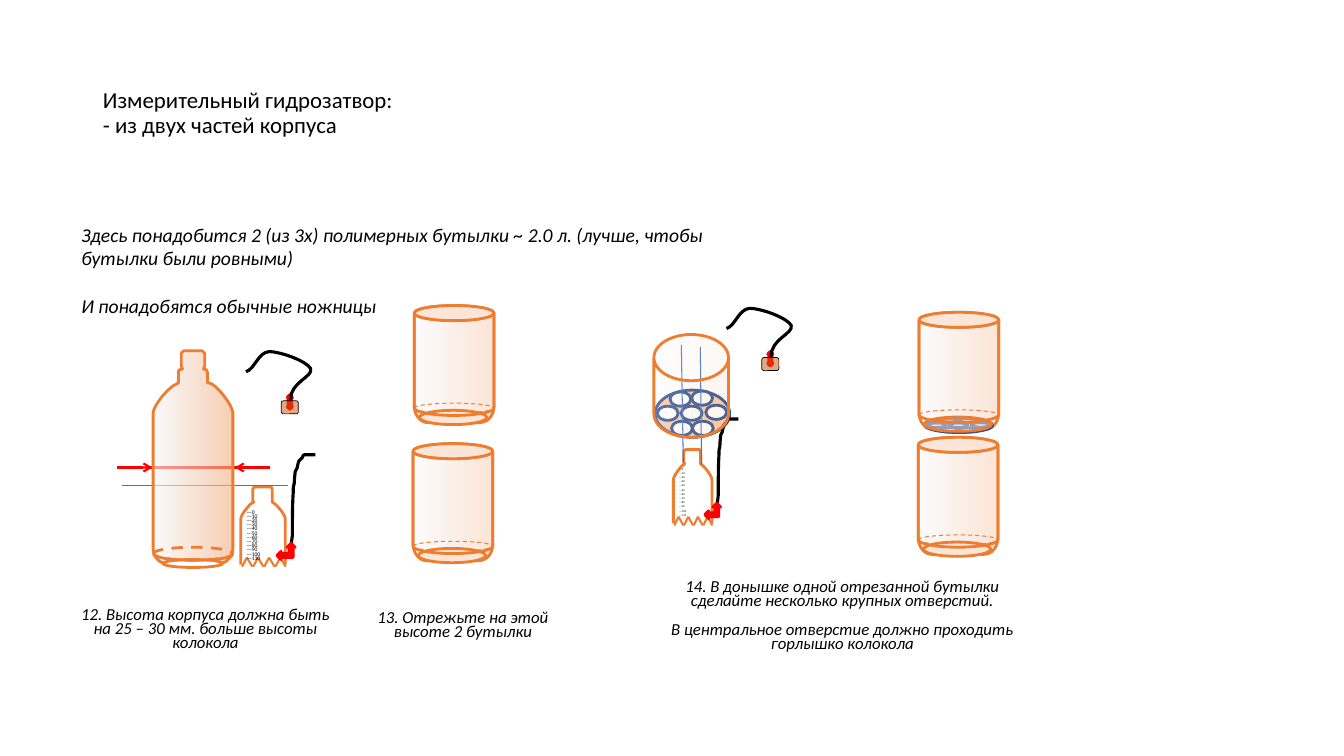
from lxml import etree
from pptx import Presentation
from pptx.dml.color import RGBColor as RGB
from pptx.enum.dml import MSO_LINE
from pptx.enum.shapes import MSO_CONNECTOR, MSO_SHAPE as SHAPE
from pptx.enum.text import MSO_ANCHOR, MSO_AUTO_SIZE, PP_ALIGN
from pptx.oxml.ns import qn
from pptx.util import Cm, Pt

HUE = {"ink": "000000", "rim": "ED7D31", "red": "FF0000", "blue": "4472C4",
       "navy": "325490", "white": "FFFFFF", "pale": "FBE5D6", "peach": "F8CBAD",
       "frost": "F6F8FC", "glow": "F4B183", "rust": "C55A11"}

deck = Presentation()
deck.slide_width, deck.slide_height = Cm(33.87), Cm(19.05)
slide = deck.slides.add_slide(deck.slide_layouts[5])
shapes = slide.shapes


def paint(shape, fill=(), line=None, wide=2, dash=False):
    """Fill is a run of (colour, opacity): none, one, or two for a gradient."""
    props = shape._element.spPr
    if len(fill) == 2:
        shape.fill.gradient()
        shape.fill.gradient_angle = 0
        for stop, (name, _) in zip(shape.fill.gradient_stops, fill):
            stop.color.rgb = RGB.from_string(HUE[name])
    elif fill:
        shape.fill.solid()
        shape.fill.fore_color.rgb = RGB.from_string(HUE[fill[0][0]])
    elif hasattr(shape, "fill"):
        shape.fill.background()
    for node, (_, alpha) in zip(list(props.iter(qn("a:srgbClr"))), fill):
        if alpha < 100:
            etree.SubElement(node, qn("a:alpha"), val=str(alpha * 1000))
    if line:
        shape.line.color.rgb = RGB.from_string(HUE[line])
        shape.line.width = Pt(wide)
        if dash:
            shape.line.dash_style = MSO_LINE.DASH
    else:
        shape.line.fill.background()
    etree.SubElement(props, qn("a:effectLst"))
    return shape


def trace(x, y, steps, close=True, sx=1, sy=1):
    """Outline from points (2 numbers) and cubic curves (6 numbers), in cm."""
    dots = [steps[0]]
    for step in steps[1:]:
        if len(step) == 2:
            dots.append(step)
            continue
        ends = [dots[-1], step[:2], step[2:4], step[4:]]
        for t in (n / 8 for n in range(1, 9)):
            parts = ((1 - t) ** 3, 3 * t * (1 - t) ** 2, 3 * t * t * (1 - t), t ** 3)
            dots.append([sum(p * e[i] for p, e in zip(parts, ends)) for i in (0, 1)])
    dots = [(Cm(x + a * sx), Cm(y + b * sy)) for a, b in dots]
    pen = shapes.build_freeform(*dots[0], scale=1.0)
    pen.add_line_segments(dots[1:], close=close)
    return pen.convert_to_shape()


WHITE, PALE = [("white", 100)], [("pale", 100)]

# Title
title = shapes.title
title.left, title.top, title.width, title.height = map(Cm, (2.34, 1.02, 20.55, 3.68))
frame = title.text_frame
frame.auto_size, frame.vertical_anchor = MSO_AUTO_SIZE.NONE, MSO_ANCHOR.MIDDLE
para = frame.paragraphs[0]
para.alignment, para.line_spacing = PP_ALIGN.LEFT, 0.9
para.add_run().text = "Измерительный гидрозатвор:"
para.add_line_break()
para.add_run().text = "- из двух частей корпуса"
for run in para.runs:
    run.font.name, run.font.size = "Calibri", Pt(16.3)
    run.font.color.rgb = RGB.from_string(HUE["ink"])

# Cut bottles: bodies
CUPS = [(10.44, 7.7), (10.41, 11.18), (23.16, 7.87), (23.14, 11.02)]
HOLED = CUPS[2]
BODY = [(0, .2), (2.01, .2), (2.01, 2.54), (2.01, 2.74, 1.88, 2.95, 1.65, 2.95),
        (.33, 2.95), (.15, 2.95, 0, 2.74, 0, 2.54)]
for x, y in CUPS:
    paint(trace(x, y, BODY), [("frost", 36), ("glow", 33)], "rim")

# Bottoms with holes, places as shares of the disc
HOLES = [(.35, .34), (.2, .04), (.49, .02), (.68, .32), (.03, .34), (.22, .66), (.5, .66)]
for x, y, w, h in [(16.51, 9.83, 1.88, 1.19), (23.32, 10.54, 1.7, .36)]:
    disc = shapes.add_shape(SHAPE.OVAL, *map(Cm, (x, y, w, h)))
    paint(disc, [("peach", 100)], "navy")
    for a, b in HOLES:
        box = x + a * w, y + b * h, .28 * w, .3 * h
        paint(shapes.add_shape(SHAPE.OVAL, *map(Cm, box)), WHITE, "navy")

# Cut bottles: bases, walls and rims
for x, y in CUPS:
    holed = (x, y) == HOLED
    back = SHAPE.ARC if holed else SHAPE.OVAL
    base = [("pale", 50)] if holed else PALE
    for kind, dx, dy, w, h, fill, wide in [
            (back, 0, 2.46, 2.01, .25, (), .75),
            (SHAPE.OVAL, .13, 2.64, 1.7, .36, base, 2),
            (SHAPE.CAN, 0, 0, 2.01, 2.77, (), 2),
            (SHAPE.OVAL, 0, 0, 2.01, .38, PALE, 2)]:
        part = shapes.add_shape(kind, *map(Cm, (x + dx, y + dy, w, h)))
        if kind == SHAPE.CAN:
            part.adjustments[0] = .189
        elif kind == SHAPE.ARC:
            part.adjustments[0], part.adjustments[1] = 108.49, 0
        paint(part, fill, "rim", wide, dash=wide < 1)

# Bells: small bottle, torn edge, tube, arrow and scale
BELL = [(.38, 0), (.74, 0), (.78, 0, .79, .04, .79, .08), (.79, .38), (.86, .43),
        (.97, .53, 1.12, .71, 1.12, .81), (1.12, 2.84), (0, 2.84), (0, .81),
        (0, .71, .15, .53, .25, .43), (.33, .38), (.3, .36), (.3, .08),
        (.3, .04, .33, 0, .38, 0)]
TUBE = [(1.27, 1.47), (1.3, 1.17, 1.3, 1.3, 1.3, 1.09), (1.3, .79, 1.3, .46, 1.32, .15),
        (1.32, -.1, 1.35, 0, 1.35, -.18), (1.37, -.38), (1.42, -.48),
        (1.42, -.48, 1.45, -.64, 1.47, -.66), (1.55, -.74),
        (1.57, -.79, 1.57, -.81, 1.63, -.81), (1.88, -.81)]
for x, y, sx, sy, drop, size in [(6.07, 12.27, 1, 1, .48, 4), (16.97, 11.33, .87, .95, .3, 2)]:
    paint(trace(x, y, BELL, True, sx, sy), WHITE, "rim")
    box = x - .3 * sx, y + 1.96 * sy, 1.73 * sx, .97 * sy
    paint(shapes.add_shape(SHAPE.RECTANGLE, *map(Cm, box)), WHITE)
    for n in range(4):
        left = .03 + .28 * n
        for foot in (left, left + .26):
            ends = x + foot * sx, y + 2.01 * sy, x + (left + .12) * sx, y + 1.78 * sy
            tooth = shapes.add_connector(MSO_CONNECTOR.STRAIGHT, *map(Cm, ends))
            paint(tooth, line="rim", wide=1.5)
    paint(trace(x, y, TUBE, False, sx, sy), line="ink", wide=2.25)
    box = x + .91 * sx, y + 1.42 * sy, .46 * sx, .41 * sy
    paint(shapes.add_shape(SHAPE.LEFT_UP_ARROW, *map(Cm, box)), [("red", 100)], "red")
    frame = shapes.add_textbox(*map(Cm, (x - .1, y + drop, .91 * sx, 1.52))).text_frame
    frame.word_wrap = True
    for n in range(12):
        para = frame.paragraphs[0] if n == 0 else frame.add_paragraph()
        para.text, para.line_spacing = f"---{10 * n}", Pt(3)
        para.font.name, para.font.size = "Calibri", Pt(size)
        para.font.color.rgb = RGB.from_string(HUE["ink"])

# Level lines and width arrows
for x1, y1, x2, y2, hue, wide, tip in [
        (3.07, 12.24, 7.26, 12.24, "blue", .75, None),
        (17.17, 8.69, 17.22, 11.66, "blue", .75, None),
        (17.65, 8.74, 17.68, 11.71, "blue", .75, None),
        (2.95, 11.78, 3.84, 11.78, "red", 1.5, "a:tailEnd"),
        (5.92, 11.78, 6.81, 11.78, "red", 1.5, "a:headEnd"),
        (3.76, 11.78, 6.2, 11.78, "red", 1.5, None)]:
    mark = shapes.add_connector(MSO_CONNECTOR.STRAIGHT, *map(Cm, (x1, y1, x2, y2)))
    paint(mark, line=hue, wide=wide)
    if tip:
        etree.SubElement(mark.line._get_or_add_ln(), qn(tip), type="arrow")

# Whole bottle with its bottom
BOTTLE = [(.79, 0), (1.22, 0), (1.24, 0, 1.3, .05, 1.3, .08), (1.3, .38), (1.27, .46),
          (1.35, .48), (1.35, .51, 1.37, .53, 1.37, .56), (1.37, .81), (1.4, .81),
          (1.57, .81, 2.01, 1.37, 2.01, 1.57), (2.01, 4.98),
          (2.01, 5.18, 1.85, 5.36, 1.68, 5.36), (.33, 5.36),
          (.15, 5.36, 0, 5.18, 0, 4.98), (0, 1.57), (0, 1.4, .36, .94, .58, .84),
          (.64, .81), (.64, .56), (.64, .53, .64, .51, .66, .48), (.74, .46),
          (.71, .38), (.71, .08), (.71, .05, .76, 0, .79, 0)]
paint(trace(3.86, 8.84, BOTTLE), [("frost", 62), ("glow", 62)], "rim")
paint(shapes.add_shape(SHAPE.OVAL, *map(Cm, (4.11, 14.1, 1.5, .2))), WHITE, "rim")
front = shapes.add_shape(SHAPE.ARC, *map(Cm, (3.89, 13.82, 1.98, .3)))
front.adjustments[0], front.adjustments[1] = .76, 106.9
paint(front, line="rim")
back = shapes.add_shape(SHAPE.OVAL, *map(Cm, (3.86, 13.79, 2.01, .33)))
paint(back, line="rim", dash=True)

# Clear cup over the bell
cup = shapes.add_shape(SHAPE.CAN, *map(Cm, (16.48, 8.43, 1.88, 2.59)))
cup.adjustments[0] = .62
paint(cup, [("frost", 20), ("glow", 13)], "rim")

# Hoses with a weight
HOSE = [(1.12, 1.22), (1.12, .76, 1.7, .64, 1.63, .43), (1.52, .23, .86, 0, .58, 0),
        (.3, .03, .23, .43, 0, .51)]
for x, y in [(18.31, 7.77), (6.2, 8.86)]:
    arrow = shapes.add_shape(SHAPE.LEFT_RIGHT_ARROW, *map(Cm, (x + .94, y + 1.22, .33, .1)))
    arrow.rotation = 270
    paint(arrow, [("red", 100)], "red", 3)
    paint(trace(x, y, HOSE, False), line="ink", wide=2.25)
    stone = shapes.add_shape(SHAPE.ROUNDED_RECTANGLE, *map(Cm, (x + .89, y + 1.24, .43, .33)))
    paint(stone, [("rust", 51)], "ink", .5)

# Lead text and captions
STEP = {"alignment": PP_ALIGN.CENTER, "line_spacing": Pt(10)}
for box, size, gap, form, lines in [
        ((1.8, 5.49, 17.75, 2.62), 14, 17, {}, [
            "Здесь понадобится 2 (из 3х) полимерных бутылки ~ 2.0 л. (лучше, чтобы бутылки были ровными)",
            "И понадобятся обычные ножницы"]),
        ((1.55, 15.24, 7.26, 1.32), 12, 0, STEP, [
            "12. Высота корпуса должна быть на 25 – 30 мм. больше высоты колокола"]),
        ((8.56, 15.32, 6.22, 1.32), 12, 0, STEP, ["13. Отрежьте на этой высоте 2 бутылки"]),
        ((16.15, 14.55, 10.16, 2.01), 12, 10, STEP, [
            "14. В донышке одной отрезанной бутылки сделайте несколько крупных отверстий.",
            "В центральное отверстие должно проходить горлышко колокола"])]:
    frame = shapes.add_textbox(*map(Cm, box)).text_frame
    frame.word_wrap = True
    for n, line in enumerate(lines):
        para = frame.add_paragraph() if n else frame.paragraphs[0]
        para.text, para.space_before = line, Pt(gap if n else 0)
        for key, val in form.items():
            setattr(para, key, val)
        for key, val in {"name": "Calibri", "size": Pt(size), "italic": True}.items():
            setattr(para.font, key, val)
        para.font.color.rgb = RGB.from_string(HUE["ink"])

deck.save("out.pptx")
